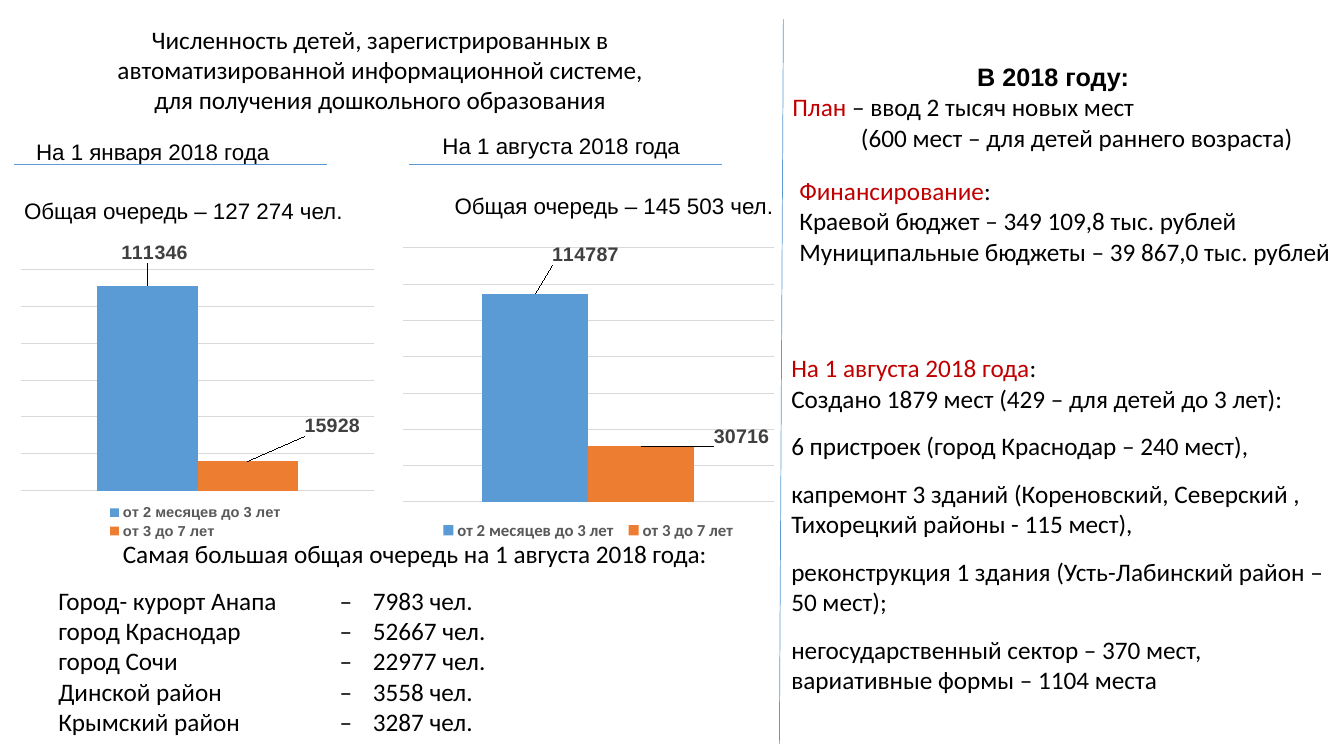
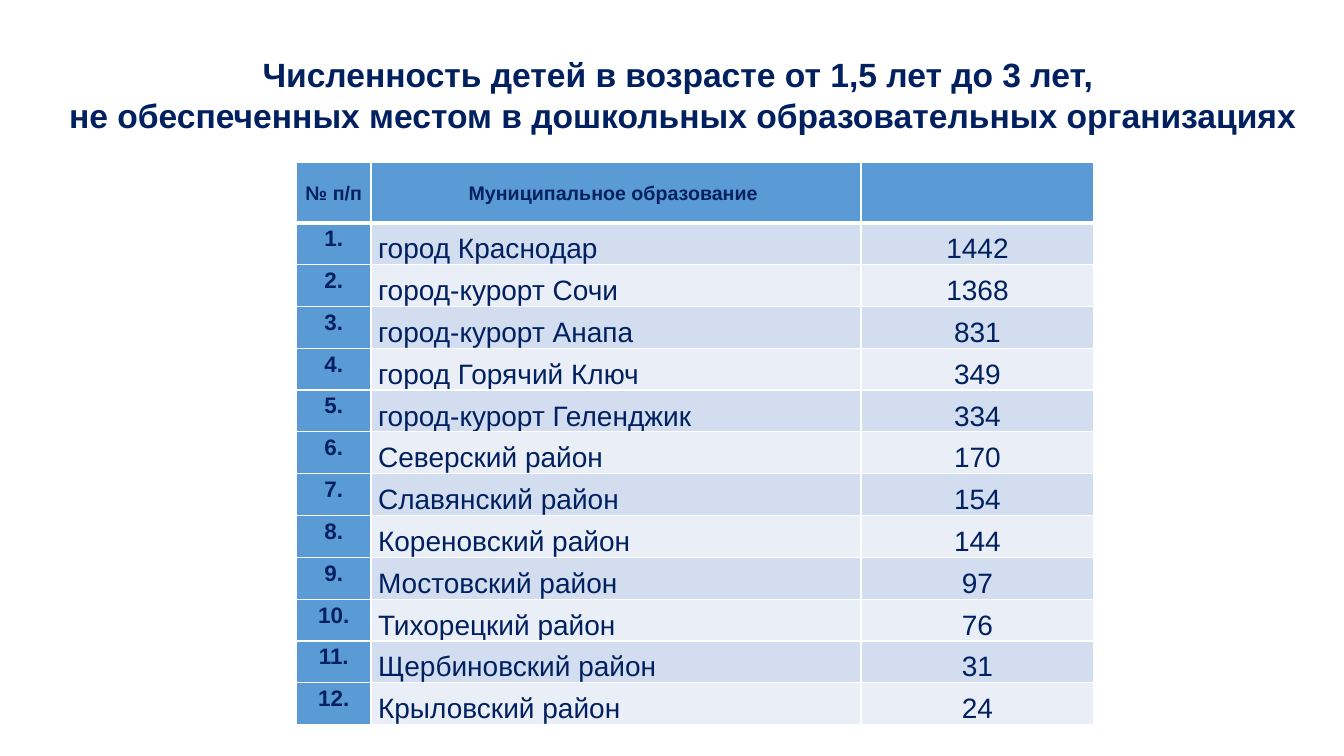
from lxml import etree
from pptx import Presentation
from pptx.chart.data import CategoryChartData
from pptx.dml.color import RGBColor
from pptx.enum import chart as ch, shapes, text
from pptx.oxml import ns
from pptx.util import Inches, Pt

BLUE, ORANGE, NAVY, RED = "5B9BD5", "ED7D31", "002060", "C00000"
BLACK, WHITE, GRID = "000000", "FFFFFF", "D9D9D9"
LABEL_GREY, LEGEND_GREY = "404040", "595959"
BANDS = ("D2DEEF", "EAEFF7")
CENTER = text.PP_ALIGN.CENTER
rgb = RGBColor.from_string

BODY = {"name": "Calibri", "size": 18, "color": BLACK, "bold": False}
CAPTION = {**BODY, "name": "Arial", "size": 16}
HEADING = {**BODY, "name": "Arial", "bold": True}
ACCENT = {**BODY, "color": RED}
TITLE = {**HEADING, "size": 24, "color": NAVY}
CHART_LABEL = {**HEADING, "size": 14, "color": LABEL_GREY}


def set_font(font, style):
    values = {**style, "size": Pt(style["size"])}
    font.color.rgb = rgb(values.pop("color"))
    for key, value in values.items():
        setattr(font, key, value)


def add_text(slide, box, paragraphs, style=BODY):
    """Each paragraph is a string or (runs, format values); a run is (text, style)."""
    frame = slide.shapes.add_textbox(*map(Inches, box)).text_frame
    frame.word_wrap = True
    for index, item in enumerate(paragraphs):
        paragraph = frame.add_paragraph() if index else frame.paragraphs[0]
        runs, values = (item, {}) if isinstance(item, str) else item
        for key, value in values.items():
            setattr(paragraph, key, value)
        for content, run_style in [(runs, style)] if isinstance(runs, str) else runs:
            run = paragraph.add_run()
            run.text = content
            set_font(run.font, run_style)
    return frame


presentation = Presentation()
presentation.slide_width = Inches(13.33)
presentation.slide_height = Inches(7.5)
blank = presentation.slide_layouts[6]

# Slide 1: headings
slide = presentation.slides.add_slide(blank)
centered = {"alignment": CENTER}
add_text(slide, (0.96, 0.19, 5.62, 1.01), [
    ("Численность детей, зарегистрированных в автоматизированной информационной системе,", centered),
    ("для получения дошкольного образования", centered),
])
for box, caption in [
    ((0.26, 1.32, 2.53, 0.37), "На 1 января 2018 года"),
    ((4.29, 1.26, 2.61, 0.37), "На 1 августа 2018 года"),
    ((0.14, 1.91, 3.64, 0.37), "Общая очередь – 127 274 чел."),
    ((4.41, 1.86, 3.44, 0.37), "Общая очередь – 145 503 чел."),
]:
    add_text(slide, box, [caption], CAPTION)

# Caption rules and the column divider
for ends in [(0.14, 1.63, 3.24, 1.63), (4.06, 1.63, 7.16, 1.63), (7.77, 0.19, 7.73, 7.38)]:
    line = slide.shapes.add_connector(shapes.MSO_CONNECTOR.STRAIGHT, *map(Inches, ends))
    line.line.color.rgb = rgb(BLUE)
    line.line.width = Pt(0.5)
    etree.SubElement(line._element.spPr, ns.qn("a:effectLst"))

# Queue charts: box, values, axis maximum, legend font, plot, legend and label layouts
arial_legend = {**HEADING, "size": 10.5, "color": LEGEND_GREY}
calibri_legend = {**arial_legend, "name": "Calibri", "size": 12}
for box, values, maximum, legend_style, plot_box, legend_box, offsets in [
    ((0.14, 2.4, 3.64, 3), (111346, 15928), 120000, arial_legend,
     (0.02, 0.08, 0.96, 0.74), (0.25, 0.86, 0.5, 0.13), [(0.02, -0.06), (0.23, -0.07)]),
    ((3.92, 2.4, 3.83, 3), (114787, 30716), 140000, calibri_legend,
     (0.02, 0.02, 0.96, 0.84), None, [(0.13, -0.08), (0.26, 0.02)]),
]:
    data = CategoryChartData()
    data.categories = ["1"]
    for name, value in zip(("от 2 месяцев до 3 лет ", "от 3 до 7 лет"), values):
        data.add_series(name, [value])
    chart = slide.shapes.add_chart(
        ch.XL_CHART_TYPE.COLUMN_CLUSTERED, *map(Inches, box), data).chart
    chart.has_title = False
    set_font(chart.font, {**BODY, "size": 10})
    chart.has_legend = True
    chart.legend.position = ch.XL_LEGEND_POSITION.BOTTOM
    chart.legend.include_in_layout = False
    set_font(chart.legend.font, legend_style)

    axis = chart.value_axis
    for key, value in {"visible": False, "minimum_scale": 0, "maximum_scale": maximum,
                       "major_unit": 20000, "has_major_gridlines": True}.items():
        setattr(axis, key, value)
    axis.major_gridlines.format.line.color.rgb = rgb(GRID)
    axis.major_gridlines.format.line.width = Pt(0.75)
    chart.category_axis.visible = False

    plot = chart.plots[0]
    plot.gap_width, plot.overlap, plot.vary_by_categories = 150, 0, False
    for series, color in zip(plot.series, (BLUE, ORANGE)):
        series.format.fill.solid()
        series.format.fill.fore_color.rgb = rgb(color)
        label = series.points[0].data_label
        set_font(label.font, CHART_LABEL)
        label.position = ch.XL_LABEL_POSITION.OUTSIDE_END

    # Manual places of the plot, the legend and the labels
    root = chart._chartSpace
    layouts = [(root.xpath(".//c:plotArea")[0], 0, plot_box)]
    if legend_box:
        layouts.append((root.xpath(".//c:legend")[0], 1, legend_box))
    layouts += [(label, 1, offset) for label, offset in zip(root.xpath(".//c:dLbl"), offsets)]
    for parent, position, numbers in layouts:
        for old in parent.findall(ns.qn("c:layout")):
            parent.remove(old)
        layout = etree.Element(ns.qn("c:layout"))
        manual = etree.SubElement(layout, ns.qn("c:manualLayout"))
        fields = list(zip("xywh", numbers))
        if len(numbers) == 4:
            fields = [("xMode", "edge"), ("yMode", "edge")] + fields
        if position == 0:
            fields.insert(0, ("layoutTarget", "inner"))
        for tag, value in fields:
            etree.SubElement(manual, ns.qn("c:" + tag)).set("val", str(value))
        parent.insert(position, layout)

# Longest queues, aligned on tab stops
queues = [("Город- курорт Анапа", 7983), ("город Краснодар", 52667), ("город Сочи", 22977),
          ("Динской район", 3558), ("Крымский район", 3287)]
rows = [(f"{place}\t–\t{count} чел.", {"space_before": Pt(0 if index else 12)})
        for index, (place, count) in enumerate(queues)]
frame = add_text(slide, (0.48, 5.29, 7.27, 2.09), [
    ("Самая большая общая очередь на 1 августа 2018 года:", centered), *rows])
for paragraph in frame.paragraphs[1:]:
    tabs = etree.SubElement(paragraph._p.get_or_add_pPr(), ns.qn("a:tabLst"))
    for stop in (2.79, 3.12):
        tab = etree.SubElement(tabs, ns.qn("a:tab"))
        tab.set("pos", str(Inches(stop)))
        tab.set("algn", "l")

# Right column: plan, funding, results
frame = add_text(slide, (7.76, 0.56, 5.44, 1.04), [
    ([("В 2018 году: ", HEADING)], centered),
    ([("План", ACCENT), (" – ввод 2 тысяч новых мест", BODY)], {}),
    ("(600 мест – для детей раннего возраста)", centered),
])
frame.paragraphs[2]._p.get_or_add_pPr().set("marL", str(Inches(0.4)))
add_text(slide, (7.83, 1.69, 5.53, 1.01), [
    ([("Финансирование", ACCENT), (":", BODY)], {}),
    "Краевой бюджет – 349 109,8 тыс. рублей",
    "Муниципальные бюджеты – 39 867,0 тыс. рублей",
])
gap = {"space_before": Pt(12.5)}
add_text(slide, (7.75, 3.45, 5.6, 3.53), [
    ([("На 1 августа 2018 года", ACCENT), (":", BODY)], {}),
    "Создано 1879 мест (429 – для детей до 3 лет):",
    ("6 пристроек (город Краснодар – 240 мест),", gap),
    ("капремонт 3 зданий (Кореновский, Северский ,", gap),
    "Тихорецкий районы - 115 мест),",
    ("реконструкция 1 здания (Усть-Лабинский район –", gap),
    "50 мест);",
    ("негосударственный сектор – 370 мест,", gap),
    "вариативные формы – 1104 места",
])

# Slide 2: title
slide = presentation.slides.add_slide(blank)
add_text(slide, (0.42, 0.49, 12.7, 0.91), [
    ("Численность детей в возрасте от 1,5 лет до 3 лет, ", centered),
    ("не обеспеченных местом в дошкольных образовательных организациях", centered),
], TITLE)

# Table of municipalities
municipalities = [
    ("город Краснодар", 1442), ("город-курорт Сочи", 1368), ("город-курорт Анапа", 831),
    ("город Горячий Ключ", 349), ("город-курорт Геленджик", 334), ("Северский район", 170),
    ("Славянский район", 154), ("Кореновский район", 144), ("Мостовский район", 97),
    ("Тихорецкий район", 76), ("Щербиновский район", 31), ("Крыловский район", 24),
]
cells = [("№ п/п", "Муниципальное образование ", "")]
cells += [(f"{number}.", place, str(count))
          for number, (place, count) in enumerate(municipalities, 1)]
table = slide.shapes.add_table(
    len(cells), 3, *map(Inches, (2.94, 1.61, 7.91, 5.52))).table
table.first_row = table.horz_banding = False
for column, width in zip(table.columns, (0.74, 4.86, 2.31)):
    column.width = Inches(width)
for row_index, contents in enumerate(cells):
    header = row_index == 0
    table.rows[row_index].height = Inches(0.6 if header else 0.415)
    for column_index, content in enumerate(contents):
        cell = table.cell(row_index, column_index)
        key_cell = header or column_index == 0
        anchor = "MIDDLE" if header else "TOP" if key_cell else "BOTTOM"
        for key, value in {"margin_left": Inches(0.07), "margin_right": Inches(0.07),
                           "margin_top": 0, "margin_bottom": 0,
                           "vertical_anchor": text.MSO_ANCHOR[anchor]}.items():
            setattr(cell, key, value)
        for side in "LRTB":
            thick = (row_index, side) in [(0, "B"), (1, "T")]
            border = etree.SubElement(cell._tc.get_or_add_tcPr(), ns.qn("a:ln" + side))
            border.set("w", str(Pt(3 if thick else 1)))
            fill = etree.SubElement(border, ns.qn("a:solidFill"))
            etree.SubElement(fill, ns.qn("a:srgbClr")).set("val", WHITE)
        cell.fill.solid()
        cell.fill.fore_color.rgb = rgb(BLUE if key_cell else BANDS[(row_index - 1) % 2])
        if content:
            paragraph = cell.text_frame.paragraphs[0]
            paragraph.line_spacing = 1.15
            if header or column_index != 1:
                paragraph.alignment = CENTER
            run = paragraph.add_run()
            run.text = content
            size = 14 if header else 16 if key_cell else 20
            set_font(run.font, {**TITLE, "size": size, "bold": key_cell})

presentation.save("out.pptx")
